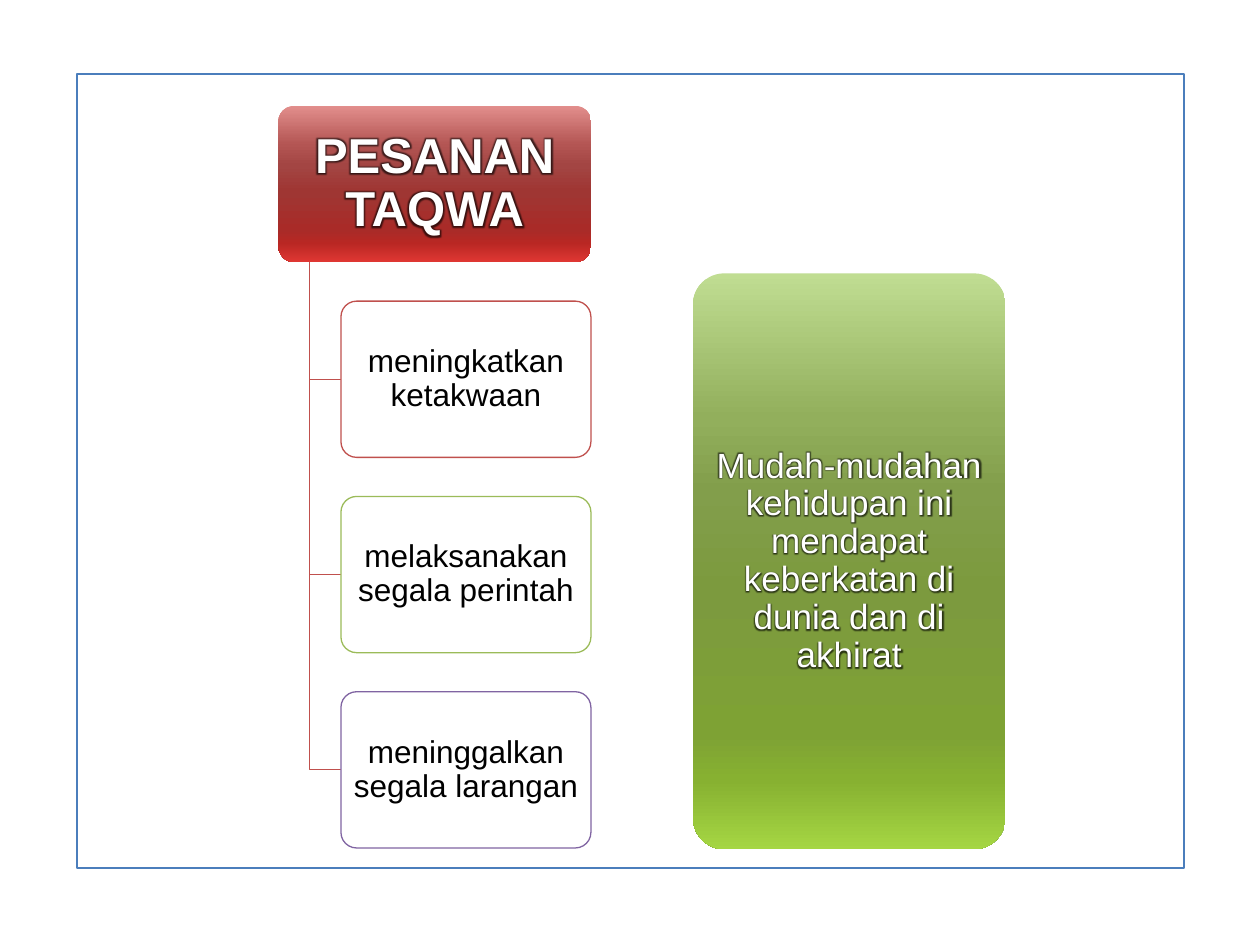
from lxml import etree
from pptx import Presentation
from pptx.dml.color import RGBColor
from pptx.enum.shapes import MSO_SHAPE
from pptx.enum.text import MSO_ANCHOR, MSO_AUTO_SIZE, PP_ALIGN
from pptx.oxml import parse_xml
from pptx.oxml.ns import nsdecls, qn
from pptx.util import Inches, Pt

RECT, ROUND = MSO_SHAPE.RECTANGLE, MSO_SHAPE.ROUNDED_RECTANGLE
MIDDLE, CENTER = MSO_ANCHOR.MIDDLE, PP_ALIGN.CENTER

# Content
TITLE = "PESANAN TAQWA"
ITEMS = [  # text, outline colour
    ("meningkatkan ketakwaan", "C0504D"),
    ("melaksanakan segala perintah", "9BBB59"),
    ("meninggalkan segala larangan", "8064A2"),
]
HOPE = "Mudah-mudahan kehidupan ini mendapat keberkatan di dunia dan di akhirat"

# Theme
THEME = {
    "font": "Arial", "title": 28, "item": 18, "hope": 20,
    "light": "FFFFFF", "dark": "000000", "frame": "4B7EBC", "branch": "C0504D",
    "stops": (0, 25, 38, 55, 80, 88, 100),
    "red": ("E28E8C", "B35553", "A34543", "9F3633", "A92B28", "B92723", "DF3733"),
    "green": ("C0DD92", "92AF5C", "829E4B", "7C9A3E", "7EA234", "87B131", "A5D643"),
}

# Layout in inches: a root column with items stepping down from it
SLIDE_W, SLIDE_H = 10, 7.5
FRAME = (0.61, 0.59, 8.79, 6.3)
ROOT_X, ROOT_Y, ROOT_W = 2.21, 0.84, 2.48
BOX_H = ROOT_W / 2
STEP = BOX_H * 1.25
INDENT = ROOT_W / 5
ITEM_X, ITEM_W = ROOT_X + INDENT, ROOT_W - INDENT
HOPE_BOX = (5.5, 2.17, ROOT_W, 4.57)

prs = Presentation()
prs.slide_width, prs.slide_height = Inches(SLIDE_W), Inches(SLIDE_H)
slide = prs.slides.add_slide(prs.slide_layouts[5])
shapes = slide.shapes


def set_line(sp, color, width):
    sp.line.color.rgb = RGBColor.from_string(color)
    sp.line.width = Pt(width)


def add_box(kind, box):
    sp = shapes.add_shape(kind, *map(Inches, box))
    sp.shadow.inherit = False
    if kind == ROUND:
        sp.adjustments[0] = 0.1
    return sp


def add_gradient_box(box, colors):
    sp = add_box(ROUND, box)
    sp.line.fill.background()
    stops = "".join(f'<a:gs pos="{pos * 1000}"><a:srgbClr val="{c}"/></a:gs>'
                    for pos, c in zip(THEME["stops"], colors))
    grad = parse_xml(f'<a:gradFill rotWithShape="1" {nsdecls("a")}><a:gsLst>{stops}'
                     '</a:gsLst><a:lin ang="5400000" scaled="0"/></a:gradFill>')
    sp._element.spPr.find(qn("a:prstGeom")).addnext(grad)
    return sp


def set_text(sp, text, size, color, inset, bold=False, glow=False):
    tf = sp.text_frame
    tf.text = text
    tf.word_wrap, tf.auto_size = True, MSO_AUTO_SIZE.NONE
    tf.vertical_anchor = MIDDLE
    tf.margin_left = tf.margin_right = Inches(inset)
    tf.margin_top = tf.margin_bottom = Inches(inset * 0.75)
    p = tf.paragraphs[0]
    p.alignment, p.line_spacing = CENTER, 0.9
    font = p.runs[0].font
    font.name, font.size, font.bold = THEME["font"], Pt(size), bold
    font.color.rgb = RGBColor.from_string(color)
    if glow:
        effect = parse_xml(f'<a:effectLst {nsdecls("a")}><a:glow rad="45720"><a:srgbClr val="000000">'
                           '<a:alpha val="65000"/></a:srgbClr></a:glow></a:effectLst>')
        p.runs[0]._r.rPr.find(qn("a:solidFill")).addnext(effect)


# Frame
frame = add_box(RECT, FRAME)
frame.fill.background()
set_line(frame, THEME["frame"], 1.25)

# Heading, with the title placeholder lifted above its panel
root_box = (ROOT_X, ROOT_Y, ROOT_W, BOX_H)
add_gradient_box(root_box, THEME["red"])
title = shapes.title
title.left, title.top, title.width, title.height = map(Inches, root_box)
set_text(title, TITLE, THEME["title"], THEME["light"], 0.1, bold=True, glow=True)
shapes._spTree.append(title._element)

# Branches and items
trunk_x, trunk_y = ROOT_X + INDENT / 2, ROOT_Y + BOX_H
for row, (text, color) in enumerate(ITEMS, 1):
    top = ROOT_Y + row * STEP
    mid = top + BOX_H / 2
    builder = shapes.build_freeform(Inches(trunk_x), Inches(trunk_y))
    builder.add_line_segments([(Inches(trunk_x), Inches(mid)),
                               (Inches(ITEM_X), Inches(mid))], close=False)
    branch = builder.convert_to_shape()
    branch.shadow.inherit = False
    branch.fill.background()
    set_line(branch, THEME["branch"], 0.75)

    item = add_box(ROUND, (ITEM_X, top, ITEM_W, BOX_H))
    item.fill.solid()
    item.fill.fore_color.rgb = RGBColor.from_string(THEME["light"])
    fill_color = item._element.spPr.find(qn("a:solidFill"))[0]
    etree.SubElement(fill_color, qn("a:alpha"), val="90000")
    set_line(item, color, 0.75)
    set_text(item, text, THEME["item"], THEME["dark"], 0.04)

# Closing hope
hope = add_gradient_box(HOPE_BOX, THEME["green"])
set_text(hope, HOPE, THEME["hope"], THEME["light"], 0.04, glow=True)

prs.save("out.pptx")
